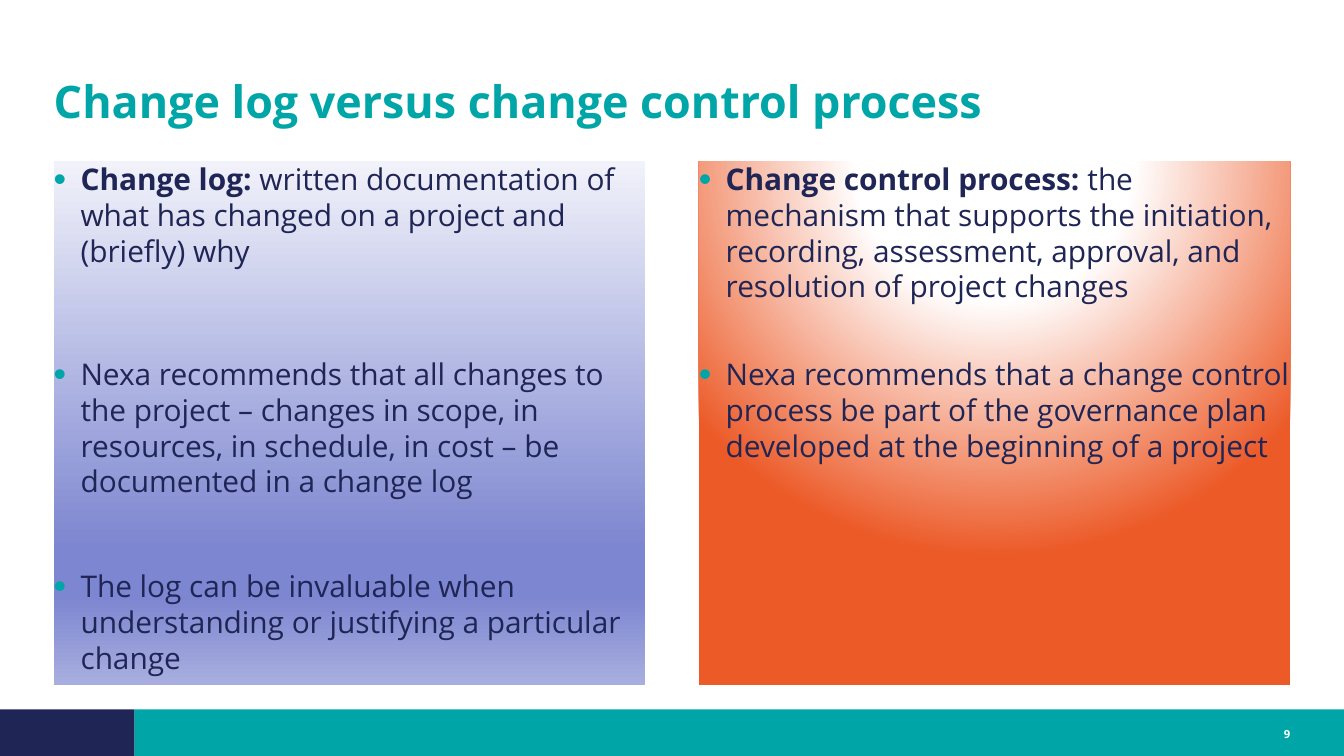
import pptx
import pptx.util
import pptx.dml.color
import pptx.enum.shapes
import pptx.enum.text
import pptx.oxml
import pptx.oxml.ns

Pt = pptx.util.Pt
Align = pptx.enum.text.PP_ALIGN
Anchor = pptx.enum.text.MSO_ANCHOR
FONT = "Open Sans"
COLORS = {"teal": "00A6A7", "navy": "1F2555", "white": "FFFFFF",
          "pale": "F1F2FA", "blue": "7D86D0", "lilac": "A8AFDF",
          "orange": "EC5A28"}
LINE = 19.1

LOG = [
    ("Change log:", " written documentation of what has changed on a project "
     "and (briefly) why", 0),
    ("", "Nexa recommends that all changes to the project – changes in scope, "
     "in resources, in schedule, in cost – be documented in a change log",
     2 * LINE + 9),
    ("", "The log can be invaluable when understanding or justifying a "
     "particular change", LINE + 18),
]
CONTROL = [
    ("Change control process:", " the mechanism that supports the initiation, "
     "recording, assessment, approval, and resolution of project changes", 0),
    ("", "Nexa recommends that a change control process be part of the "
     "governance plan developed at the beginning of a project", LINE + 9),
]
LINEAR = '<a:lin ang="5400000" scaled="0"/>'
RADIAL = ('<a:path path="circle"><a:fillToRect l="50000" t="-80000" '
          'r="50000" b="180000"/></a:path>')


def color(name):
    return pptx.dml.color.RGBColor.from_string(COLORS[name])


def parse(tag, body):
    space = pptx.oxml.ns.nsdecls("a")
    return pptx.oxml.parse_xml(f"<a:{tag} {space}>{body}</a:{tag}>")


def add_rect(slide, box, fill="white"):
    kind = pptx.enum.shapes.MSO_SHAPE.RECTANGLE
    rect = slide.shapes.add_shape(kind, *map(Pt, box))
    rect.shadow.inherit = False
    rect.line.fill.background()
    rect.fill.solid()
    rect.fill.fore_color.rgb = color(fill)
    return rect


def set_frame(frame, anchor):
    frame.word_wrap = True
    frame.vertical_anchor = anchor
    frame.margin_left = frame.margin_right = 0
    frame.margin_top = frame.margin_bottom = 0


def set_font(font, size, name, bold=None):
    font.name = FONT
    font.size = Pt(size)
    font.bold = bold
    font.color.rgb = color(name)


def add_label(slide, box, text, size, name, align=Align.LEFT):
    frame = slide.shapes.add_textbox(*map(Pt, box)).text_frame
    set_frame(frame, Anchor.BOTTOM)
    para = frame.paragraphs[0]
    para.text = text
    para.alignment = align
    set_font(para.font, size, name, True)
    return para


def set_blend(rect, stops, path):
    marks = "".join(f'<a:gs pos="{pos * 1000}"><a:srgbClr val="{COLORS[name]}"/>'
                    "</a:gs>" for pos, name in stops)
    blend = parse("gradFill", f"<a:gsLst>{marks}</a:gsLst>{path}")
    props = rect._element.spPr
    old = props.find(pptx.oxml.ns.qn("a:solidFill"))
    props.replace(old, blend)


def set_bullet(para):
    props = para._p.get_or_add_pPr()
    props.set("marL", str(Pt(14.4)))
    props.set("indent", str(-Pt(14.4)))
    tint = parse("buClr", f'<a:srgbClr val="{COLORS["teal"]}"/>')
    size = parse("buSzPct", "")
    size.set("val", "120000")
    face = parse("buFont", "")
    face.set("typeface", "Arial")
    mark = parse("buChar", "")
    mark.set("char", "•")
    props.extend([tint, size, face, mark])


def add_panel(slide, left, items, stops, path):
    rect = add_rect(slide, (left, 86.4, 316.8, 280.8))
    set_blend(rect, stops, path)
    frame = rect.text_frame
    set_frame(frame, Anchor.TOP)
    for num, (head, text, gap) in enumerate(items):
        para = frame.add_paragraph() if num else frame.paragraphs[0]
        set_bullet(para)
        para.alignment = Align.LEFT
        para.line_spacing = Pt(LINE)
        para.space_before = Pt(gap)
        set_font(para.font, 16, "navy")
        if head:
            run = para.add_run()
            run.text = head
            run.font.bold = True
        para.add_run().text = text


def main():
    deck = pptx.Presentation()
    deck.slide_width, deck.slide_height = Pt(720), Pt(405)
    slide = deck.slides.add_slide(deck.slide_layouts[6])
    add_rect(slide, (72, 380, 648, 25), "teal")
    add_rect(slide, (0, 380, 72, 25), "navy")
    add_panel(slide, 28.8, LOG, [(0, "pale"), (74, "blue"), (83, "blue"),
                                 (100, "lilac")], LINEAR)
    add_panel(slide, 374.4, CONTROL, [(0, "white"), (35, "white"),
                                      (100, "orange")], RADIAL)
    title = add_label(slide, (28.8, 14.4, 662.4, 54),
                      "Change log versus change control process", 24, "teal")
    title.line_spacing = 0.9
    add_label(slide, (666, 382.5, 25.2, 14.4), "9", 6, "white", Align.RIGHT)
    deck.save("out.pptx")


if __name__ == "__main__":
    main()
